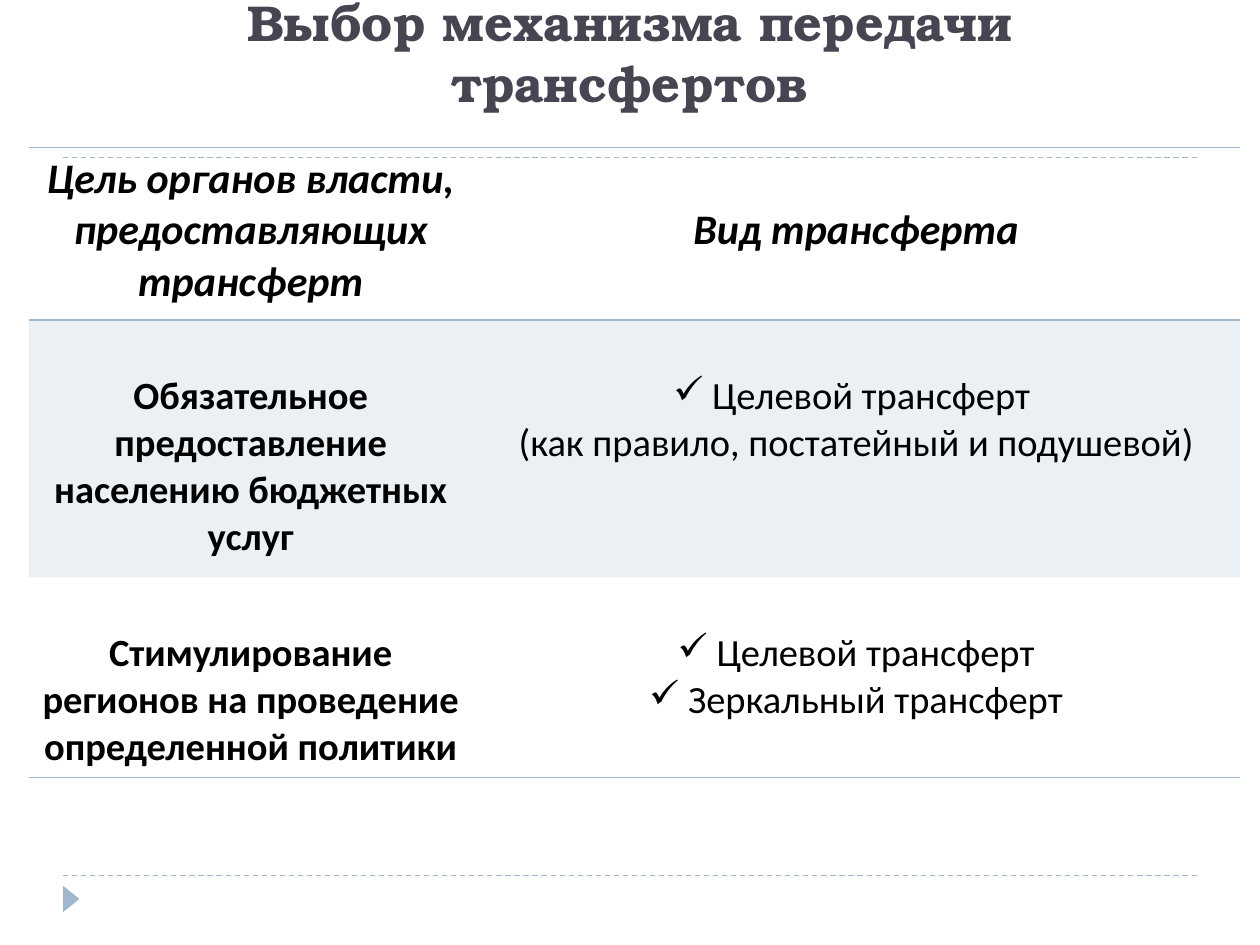
import lxml.etree
import pptx
import pptx.dml.color
import pptx.enum.dml
import pptx.enum.shapes
import pptx.enum.text
import pptx.oxml.ns
import pptx.util

Inches = pptx.util.Inches
Pt = pptx.util.Pt
qn = pptx.oxml.ns.qn

COLORS = {"accent": "9FB8CD", "title": "464653", "text": "000000"}
BODY_FONT = "Calibri"
TITLE_FONT = "TeX Gyre Bonum"
COLUMN_WIDTHS = [3.52, 6.09]
CELL_MARGIN = 0.05

# Each row: height, text size, shaded, bordered sides, cells.
# Each cell: bold, italic, lines left free above the text, (bullet, text) lines.
ROWS = [
    (1.37, 24, False, "TB", [
        (True, True, 0, [("", "Цель органов власти, предоставляющих трансферт")]),
        (True, True, 1, [("", "Вид трансферта")]),
    ]),
    (2.04, 22, True, "T", [
        (True, False, 1, [("", "Обязательное предоставление населению бюджетных услуг")]),
        (False, False, 1, [("✓", " Целевой трансферт "),
                           ("", "(как правило, постатейный и подушевой)")]),
    ]),
    (1.59, 22, False, "B", [
        (True, False, 1, [("", "Стимулирование регионов на проведение определенной политики")]),
        (False, False, 1, [("✓", " Целевой трансферт"), ("✓", " Зеркальный трансферт")]),
    ]),
]


def color(name):
    return pptx.dml.color.RGBColor.from_string(COLORS[name])


def add_span(para, text, font, size, color_name, bold=False, italic=False):
    span = para.add_run()
    span.text = text
    span.font.name = font
    span.font.size = Pt(size)
    span.font.bold = bold
    span.font.italic = italic
    span.font.color.rgb = color(color_name)


def add_rule(page, left, top, width):
    """Draw a dashed horizontal line."""
    rule = page.shapes.add_connector(
        pptx.enum.shapes.MSO_CONNECTOR.STRAIGHT,
        Inches(left), Inches(top), Inches(left + width), Inches(top))
    rule.line.color.rgb = color("accent")
    rule.line.width = Pt(0.75)
    rule.line.dash_style = pptx.enum.dml.MSO_LINE.DASH
    lxml.etree.SubElement(rule._element.spPr, qn("a:effectLst"))


def add_frame(page, left, top, width, height):
    """Draw the rules above and below the content and the corner marker."""
    for rule_top in (top, top + height):
        add_rule(page, left, rule_top, width)
    marker = page.shapes.add_shape(
        pptx.enum.shapes.MSO_SHAPE.ISOSCELES_TRIANGLE,
        Inches(left - 0.04), Inches(top + height + 0.12), Inches(0.21), Inches(0.13))
    marker.rotation = 90
    marker.shadow.inherit = False
    marker.fill.solid()
    marker.fill.fore_color.rgb = color("accent")
    marker.line.fill.background()


def add_title(page, left, top, width, height):
    box = page.shapes.add_textbox(Inches(left), Inches(top), Inches(width), Inches(height))
    frame = box.text_frame
    frame.word_wrap = True
    frame.vertical_anchor = pptx.enum.text.MSO_ANCHOR.BOTTOM
    para = frame.paragraphs[0]
    para.alignment = pptx.enum.text.PP_ALIGN.CENTER
    add_span(para, "Выбор механизма передачи трансфертов", TITLE_FONT, 28.8, "title", bold=True)


def set_borders(cell, sides):
    """Line the given sides of a cell and clear the others."""
    properties = cell._tc.get_or_add_tcPr()
    for side in "LRTB":
        line = lxml.etree.SubElement(properties, qn(f"a:ln{side}"), w=str(Pt(1)))
        if side in sides:
            fill = lxml.etree.SubElement(line, qn("a:solidFill"))
            lxml.etree.SubElement(fill, qn("a:srgbClr"), val=COLORS["accent"])
        else:
            lxml.etree.SubElement(line, qn("a:noFill"))


def set_fill(cell, shaded):
    if not shaded:
        cell.fill.background()
        return
    cell.fill.solid()
    cell.fill.fore_color.rgb = color("accent")
    shade = cell._tc.tcPr.find(qn("a:solidFill")).find(qn("a:srgbClr"))
    lxml.etree.SubElement(shade, qn("a:alpha"), val="20000")


def fill_cell(cell, size, bold, italic, free_lines, lines):
    cell.margin_top = Inches(CELL_MARGIN) + free_lines * Pt(size * 1.22)
    cell.margin_bottom = Inches(CELL_MARGIN)
    frame = cell.text_frame
    for index, (bullet, text) in enumerate(lines):
        para = frame.add_paragraph() if index else frame.paragraphs[0]
        para.alignment = pptx.enum.text.PP_ALIGN.CENTER
        if bullet:
            lxml.etree.SubElement(para._p.get_or_add_pPr(), qn("a:buChar"), char=bullet)
        add_span(para, text, BODY_FONT, size, "text", bold, italic)


def add_transfer_table(page, left, top):
    height = sum(row[0] for row in ROWS)
    table = page.shapes.add_table(
        len(ROWS), len(COLUMN_WIDTHS), Inches(left), Inches(top),
        Inches(sum(COLUMN_WIDTHS)), Inches(height)).table
    table.first_row = False
    table.horz_banding = False
    for column, width in zip(table.columns, COLUMN_WIDTHS):
        column.width = Inches(width)
    for row, (row_height, size, shaded, sides, cells) in zip(table.rows, ROWS):
        row.height = Inches(row_height)
        for cell, content in zip(row.cells, cells):
            set_borders(cell, sides)
            set_fill(cell, shaded)
            fill_cell(cell, size, *content)


def main():
    deck = pptx.Presentation()
    deck.slide_width = Inches(10)
    deck.slide_height = Inches(7.5)
    page = deck.slides.add_slide(deck.slide_layouts[6])
    add_frame(page, 0.5, 1.25, 9, 5.7)
    add_title(page, 0.5, 0.17, 9, 0.77)
    add_transfer_table(page, 0.23, 1.17)
    deck.save("out.pptx")


if __name__ == "__main__":
    main()
